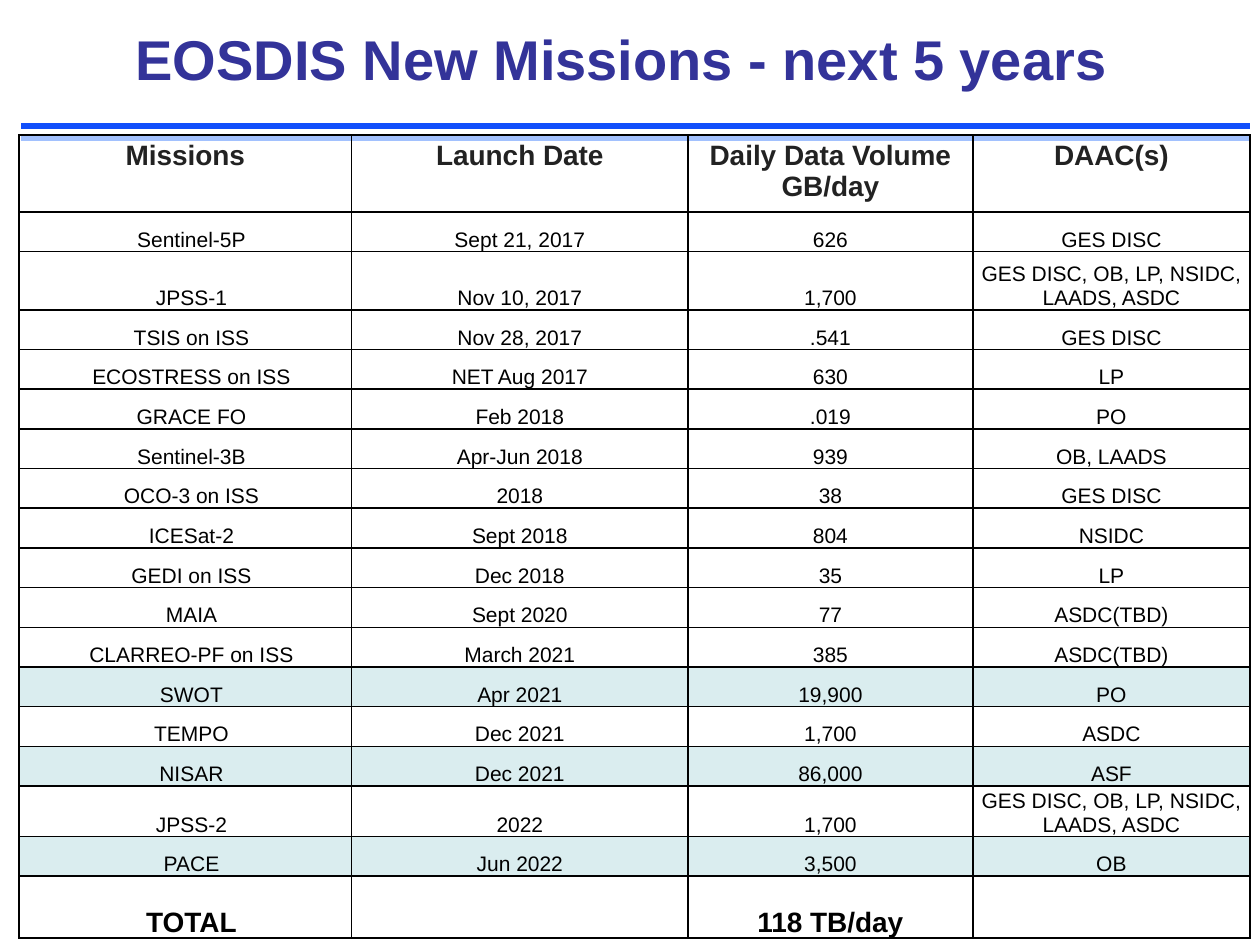
"""Build the slide of new missions."""
from dataclasses import dataclass

from lxml.etree import SubElement
from pptx import Presentation
from pptx.dml.color import RGBColor
from pptx.enum.shapes import MSO_CONNECTOR
from pptx.enum.text import MSO_ANCHOR, PP_ALIGN
from pptx.oxml.ns import qn
from pptx.util import Cm, Pt


@dataclass(frozen=True)
class Theme:
    """Hold the colours, the font and the type sizes."""
    face: str = "Arial"
    title: str = "333399"
    head: str = "222222"
    body: str = "000000"
    grid: str = "000000"
    tint: str = "DAEDEF"
    dark: str = "114FFB"
    light: str = "A2C1FE"
    huge: int = 32
    large: int = 16
    small: int = 12


THEME = Theme()
TITLE = "EOSDIS New Missions - next 5 years"
HEADS = ("Missions", "Launch Date", "Daily Data Volume\nGB/day", "DAAC(s)")
MANY = "GES DISC, OB, LP, NSIDC, LAADS, ASDC"
ROWS = (
    ("Sentinel-5P", "Sept 21, 2017", "626", "GES DISC"),
    ("JPSS-1", "Nov 10, 2017", "1,700", MANY),
    ("TSIS on ISS", "Nov 28, 2017", ".541", "GES DISC"),
    ("ECOSTRESS on ISS", "NET Aug 2017", "630", "LP"),
    ("GRACE FO", "Feb 2018", ".019", "PO"),
    ("Sentinel-3B", "Apr-Jun 2018", "939", "OB, LAADS"),
    ("OCO-3 on ISS", "2018", "38", "GES DISC"),
    ("ICESat-2", "Sept 2018", "804", "NSIDC"),
    ("GEDI on ISS", "Dec 2018", "35", "LP"),
    ("MAIA", "Sept 2020", "77", "ASDC(TBD)"),
    ("CLARREO-PF on ISS", "March 2021", "385", "ASDC(TBD)"),
    ("SWOT", "Apr 2021", "19,900", "PO"),
    ("TEMPO", "Dec 2021", "1,700", "ASDC"),
    ("NISAR", "Dec 2021", "86,000", "ASF"),
    ("JPSS-2", "2022", "1,700", MANY),
    ("PACE", "Jun 2022", "3,500", "OB"),
)
TOTAL = ("TOTAL", "", "118 TB/day", "")
TINTED = {"SWOT", "NISAR", "PACE"}
WIDTHS = (6.71, 6.78, 5.74, 5.59)
TALL = {"Missions": 1.3, "JPSS-1": 1.17, "TOTAL": 1.25}
PLAIN = 0.8


def put(thing, values):
    """Set each attribute of a thing from a dict."""
    for name, value in values.items():
        setattr(thing, name, value)


def style(frame, size, tone, bold, space=None):
    """Format every paragraph of a text frame."""
    for para in frame.paragraphs:
        put(para, {"alignment": PP_ALIGN.CENTER, "line_spacing": space})
        put(para.font, {"name": THEME.face, "size": Pt(size), "bold": bold})
        para.font.color.rgb = RGBColor.from_string(tone)


def add_title(slide):
    """Add the title text."""
    box = slide.shapes.add_textbox(Cm(2.26), Cm(0.1), Cm(20.55), Cm(2.36))
    frame = box.text_frame
    put(frame, {"text": TITLE, "word_wrap": True,
                "vertical_anchor": MSO_ANCHOR.MIDDLE})
    style(frame, THEME.huge, THEME.title, True, 0.85)


def add_rule(slide, top, tone):
    """Add a coloured rule below the title."""
    rule = slide.shapes.add_connector(
        MSO_CONNECTOR.STRAIGHT, Cm(0.43), Cm(top), Cm(25.2), Cm(top))
    rule.line.width = Pt(4)
    rule.line.color.rgb = RGBColor.from_string(tone)
    SubElement(rule._element.spPr, qn("a:effectLst"))


def add_edges(cell):
    """Draw thin lines on all four sides of a cell."""
    props = cell._tc.get_or_add_tcPr()
    for side in ("lnL", "lnR", "lnT", "lnB"):
        line = SubElement(props, qn(f"a:{side}"), w=str(Pt(1)))
        fill = SubElement(line, qn("a:solidFill"))
        SubElement(fill, qn("a:srgbClr"), val=THEME.grid)


def fill_cell(cell, text, look, inset, tinted):
    """Write one cell with its margins, edges and fill."""
    sides = ("left", "right", "top", "bottom")
    put(cell, {f"margin_{side}": Cm(inset) for side in sides})
    put(cell, {"text": text, "vertical_anchor":
               MSO_ANCHOR.TOP if inset else MSO_ANCHOR.BOTTOM})
    style(cell.text_frame, *look)
    add_edges(cell)
    if tinted:
        cell.fill.solid()
        cell.fill.fore_color.rgb = RGBColor.from_string(THEME.tint)
    else:
        cell.fill.background()


def add_grid(slide):
    """Add the table of missions."""
    lines = (HEADS, *ROWS, TOTAL)
    highs = [TALL.get(line[0], PLAIN) for line in lines]
    table = slide.shapes.add_table(
        len(lines), len(HEADS), Cm(0.38), Cm(2.72),
        Cm(sum(WIDTHS)), Cm(sum(highs))).table
    put(table, {"first_row": False, "horz_banding": False})
    for col, width in zip(table.columns, WIDTHS):
        col.width = Cm(width)
    looks = {HEADS: (THEME.large, THEME.head, True),
             TOTAL: (THEME.large, THEME.body, True)}
    for row, line, high in zip(table.rows, lines, highs):
        row.height = Cm(high)
        look = looks.get(line, (THEME.small, THEME.body, False))
        inset = 0.1 if line is HEADS else 0
        for cell, text in zip(row.cells, line):
            fill_cell(cell, text, look, inset, line[0] in TINTED)
        if line is not HEADS:
            para = row.cells[0].text_frame.paragraphs[0]
            para._p.get_or_add_pPr().set("marL", str(Cm(0.25)))


def main():
    """Build and save the deck."""
    deck = Presentation()
    put(deck, {"slide_width": Cm(25.4), "slide_height": Cm(19.05)})
    slide = deck.slides.add_slide(deck.slide_layouts[6])
    add_rule(slide, 2.54, THEME.dark)
    add_rule(slide, 2.77, THEME.light)
    add_title(slide)
    add_grid(slide)
    deck.save("out.pptx")


if __name__ == "__main__":
    main()
